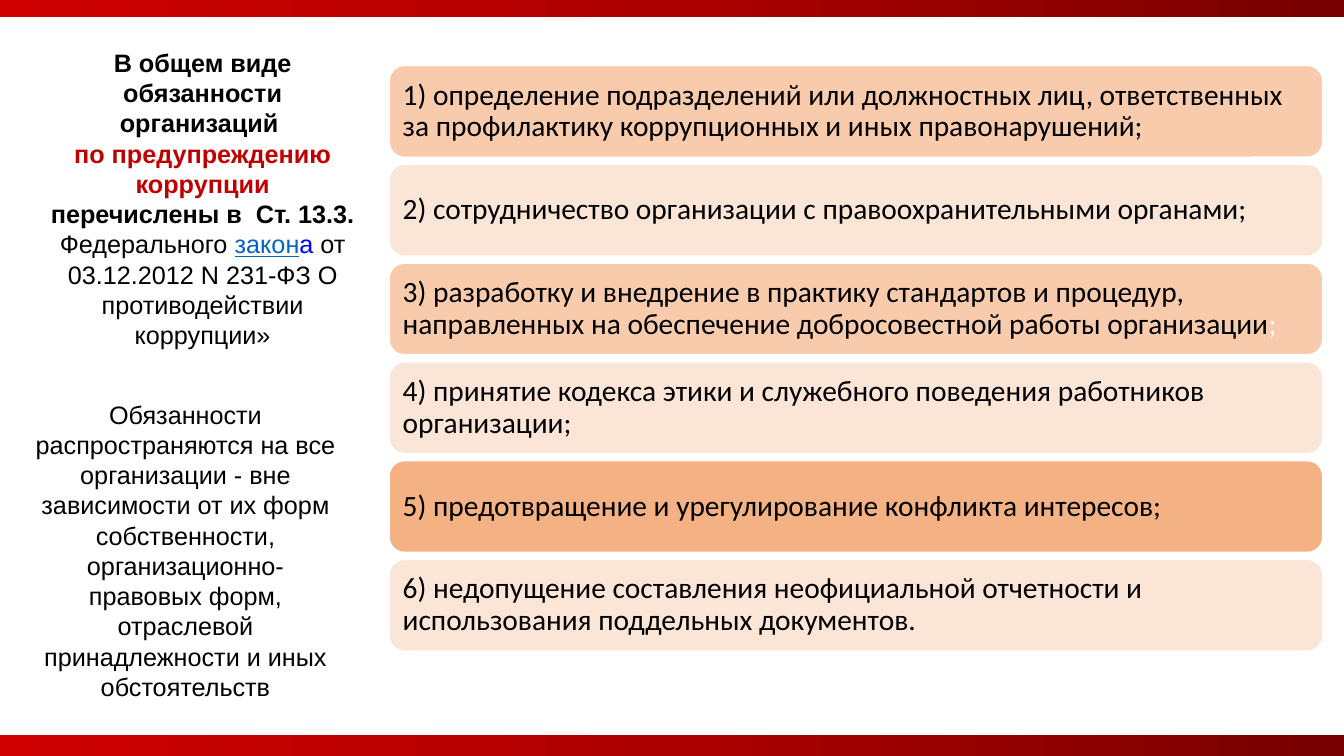
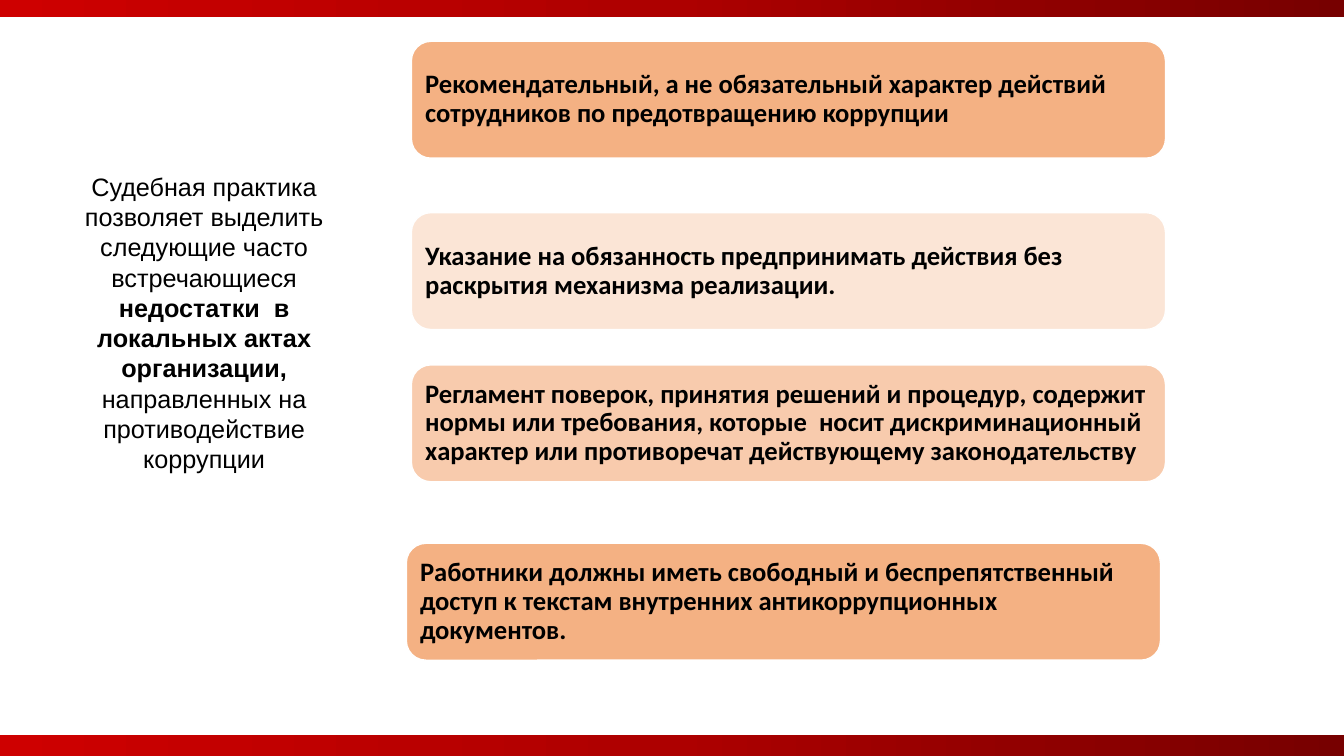
"""Build two slides on the anti-corruption duties of organisations."""
from dataclasses import dataclass

from lxml.etree import SubElement
from pptx import Presentation
from pptx.dml.color import RGBColor
from pptx.enum.shapes import MSO_SHAPE
from pptx.enum.text import MSO_ANCHOR, MSO_AUTO_SIZE, PP_ALIGN
from pptx.oxml.ns import qn
from pptx.presentation import Presentation as Deck
from pptx.slide import Slide
from pptx.util import Inches, Pt


@dataclass(frozen=True)
class Theme:
    black: str = "000000"
    white: str = "FFFFFF"
    red: str = "C00000"
    link: str = "0563C1"
    blue: str = "0000FF"
    pale: str = "FBE5D6"
    peach: str = "F8CBAD"
    orange: str = "F4B183"
    band: tuple[tuple[int, str], ...] = ((0, "CE0000"), (50, "AD0000"), (100, "770000"))
    side_font: str = "Arial"
    card_font: str = "Calibri"
    side_size: int = 18
    duty_size: int = 21
    flaw_size: int = 19


THEME = Theme()
WIDTH, HEIGHT = 13.33, 7.5
BAND_HEIGHT = 0.21


@dataclass(frozen=True)
class Run:
    text: str
    color: str = THEME.black
    bold: bool = False
    underline: bool = False


@dataclass(frozen=True)
class Card:
    left: float
    top: float
    fill: str
    runs: tuple[Run, ...]


@dataclass(frozen=True)
class CardStyle:
    width: float
    height: float
    inset: float
    size: int


DUTY_STYLE = CardStyle(9.26, 0.91, 0.09, THEME.duty_size)
FLAW_STYLE = CardStyle(7.48, 1.16, 0.08, THEME.flaw_size)
DUTY_LEFT, DUTY_TOP, DUTY_STEP = 3.86, 0.65, 0.98

DUTIES = (
    (THEME.peach, (Run("1) определение подразделений или должностных лиц, ответственных "
                       "за профилактику коррупционных и иных правонарушений;"),)),
    (THEME.pale, (Run("2) сотрудничество организации с правоохранительными органами;"),)),
    (THEME.peach, (Run("3) разработку и внедрение в практику стандартов и процедур, "
                       "направленных на обеспечение добросовестной работы организации"),
                   Run(";", THEME.white))),
    (THEME.pale, (Run("4) принятие кодекса этики и служебного поведения работников "
                      "организации;"),)),
    (THEME.orange, (Run("5) предотвращение и урегулирование конфликта интересов;"),)),
    (THEME.pale, (Run("6) недопущение составления неофициальной отчетности и "
                      "использования поддельных документов."),)),
)

FLAWS = (
    Card(4.08, 0.41, THEME.orange, (Run(
        "Рекомендательный, а не обязательный характер действий сотрудников "
        "по предотвращению коррупции", bold=True),)),
    Card(4.08, 2.11, THEME.pale, (Run(
        "Указание на обязанность предпринимать действия без раскрытия "
        "механизма реализации.", bold=True),)),
    Card(4.08, 3.62, THEME.peach, (Run(
        "Регламент поверок, принятия решений и процедур, содержит нормы или "
        "требования, которые  носит дискриминационный характер или "
        "противоречат действующему законодательству", bold=True),)),
    Card(4.03, 5.39, THEME.orange, (Run(
        "Работники должны иметь свободный и беспрепятственный доступ к "
        "текстам внутренних антикоррупционных документов.", bold=True),)),
)

LAW_TEXT = (
    (Run("В общем виде обязанности организаций ", bold=True),),
    (Run("по предупреждению коррупции ", THEME.red, bold=True),
     Run("перечислены в  Ст. 13.3. ", bold=True),
     Run("Федерального "),
     Run("закон", THEME.link, underline=True),
     Run("а ", THEME.blue),
     Run("от 03.12.2012 N 231-ФЗ О противодействии коррупции»")),
)
SCOPE_TEXT = (
    (Run("Обязанности распространяются на все организации - вне зависимости "
         "от их форм собственности, организационно-правовых форм, отраслевой "
         "принадлежности и иных обстоятельств"),),
)
PRACTICE_TEXT = (
    (Run("Судебная практика позволяет выделить следующие часто встречающиеся "),
     Run("недостатки  в локальных актах организации, ", bold=True),
     Run("направленных на противодействие коррупции")),
)


def add_runs(p, runs: tuple[Run, ...], font: str, size: int) -> None:
    for run in runs:
        r = p.add_run()
        r.text = run.text
        r.font.name = font
        r.font.size = Pt(size)
        r.font.bold = run.bold
        r.font.underline = run.underline
        r.font.color.rgb = RGBColor.from_string(run.color)


def add_band(s: Slide, top: float) -> None:
    sp = s.shapes.add_shape(MSO_SHAPE.RECTANGLE, 0, Inches(top),
                            Inches(WIDTH), Inches(BAND_HEIGHT))
    sp.shadow.inherit = False
    sp.line.fill.background()
    sp.fill.gradient()
    sp.fill.gradient_angle = 0
    stops = sp.element.spPr.find(".//" + qn("a:gsLst"))
    stops.clear()
    for position, color in THEME.band:
        stop = SubElement(stops, qn("a:gs"), pos=str(position * 1000))
        SubElement(stop, qn("a:srgbClr"), val=color)


def add_slide(prs: Deck) -> Slide:
    s = prs.slides.add_slide(prs.slide_layouts[6])
    for top in (-0.04, HEIGHT - BAND_HEIGHT):
        add_band(s, top)
    return s


def add_side_text(s: Slide, left: float, top: float, width: float, height: float,
                  paragraphs: tuple[tuple[Run, ...], ...]) -> None:
    sp = s.shapes.add_textbox(Inches(left), Inches(top), Inches(width), Inches(height))
    tf = sp.text_frame
    tf.word_wrap = True
    tf.auto_size = MSO_AUTO_SIZE.SHAPE_TO_FIT_TEXT
    for i, runs in enumerate(paragraphs):
        p = tf.add_paragraph() if i else tf.paragraphs[0]
        p.alignment = PP_ALIGN.CENTER
        add_runs(p, runs, THEME.side_font, THEME.side_size)


def add_card(s: Slide, card: Card, style: CardStyle) -> None:
    sp = s.shapes.add_shape(MSO_SHAPE.ROUNDED_RECTANGLE, Inches(card.left), Inches(card.top),
                            Inches(style.width), Inches(style.height))
    sp.shadow.inherit = False
    sp.fill.solid()
    sp.fill.fore_color.rgb = RGBColor.from_string(card.fill)
    sp.line.color.rgb = RGBColor.from_string(THEME.white)
    sp.line.width = Pt(1)
    tf = sp.text_frame
    tf.word_wrap = True
    tf.vertical_anchor = MSO_ANCHOR.MIDDLE
    tf.margin_left = tf.margin_right = Inches(style.inset)
    tf.margin_top = tf.margin_bottom = Inches(style.inset)
    p = tf.paragraphs[0]
    p.alignment = PP_ALIGN.LEFT
    p.line_spacing = 0.9
    add_runs(p, card.runs, THEME.card_font, style.size)


def build_duties(prs: Deck) -> None:
    s = add_slide(prs)
    add_side_text(s, 0.39, 0.42, 3.24, 3.13, LAW_TEXT)
    for i, (fill, runs) in enumerate(DUTIES):
        add_card(s, Card(DUTY_LEFT, DUTY_TOP + i * DUTY_STEP, fill, runs), DUTY_STYLE)
    add_side_text(s, 0.22, 3.91, 3.24, 3.13, SCOPE_TEXT)


def build_flaws(prs: Deck) -> None:
    s = add_slide(prs)
    add_side_text(s, 0.74, 1.65, 2.57, 3.43, PRACTICE_TEXT)
    for card in FLAWS:
        add_card(s, card, FLAW_STYLE)


def main() -> None:
    prs = Presentation()
    prs.slide_width, prs.slide_height = Inches(WIDTH), Inches(HEIGHT)
    build_duties(prs)
    build_flaws(prs)
    prs.save("out.pptx")


if __name__ == "__main__":
    main()
